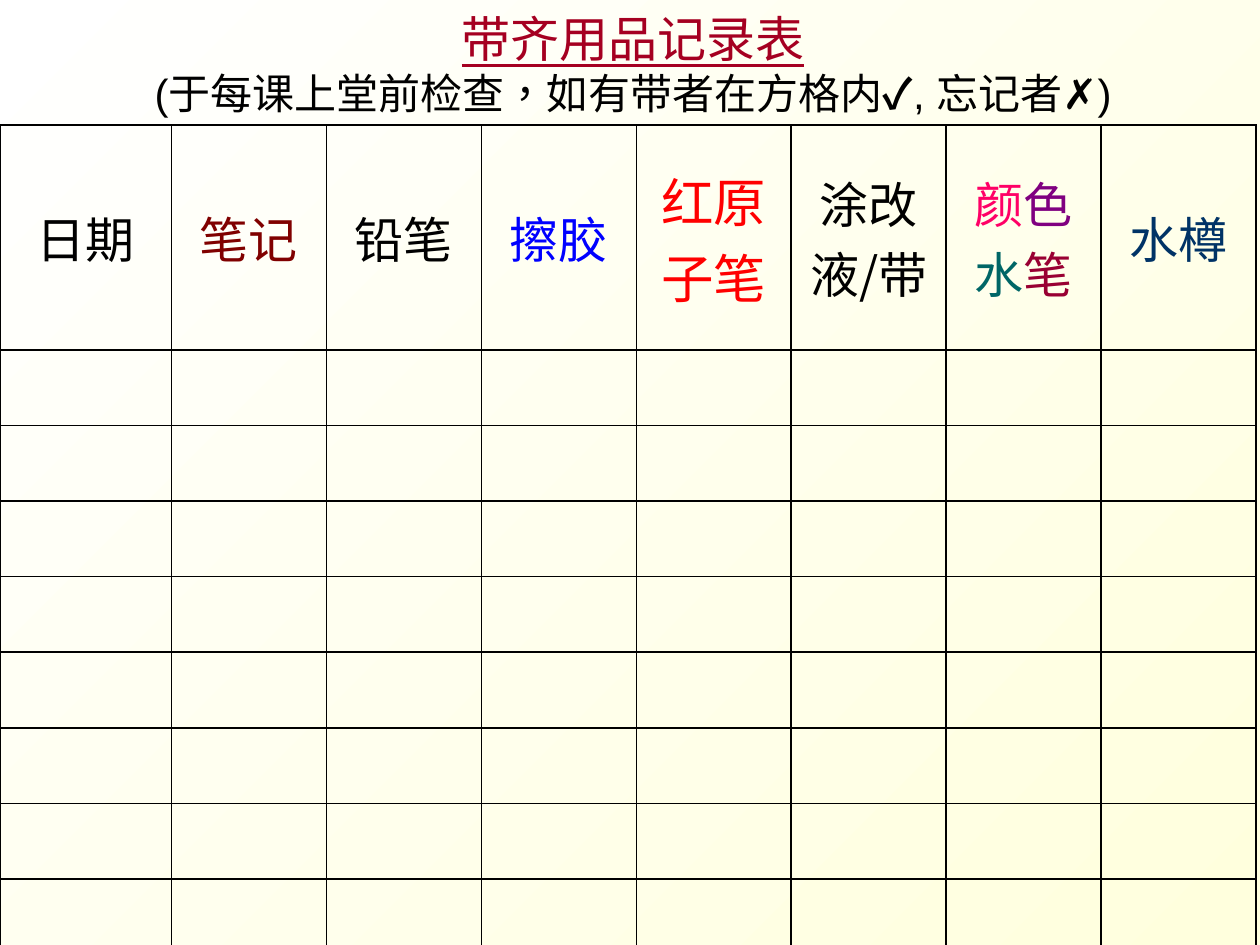
from lxml import etree
from pptx import Presentation
from pptx.dml.color import RGBColor
from pptx.enum import lang, text
from pptx.oxml import ns
from pptx.util import Inches, Pt


def color(value):
    return RGBColor.from_string(value)


def add_text(paragraph, content, size=28, font="Noto Sans CJK SC", fill="000000",
             bold=False, underline=False, east_asian=None, language=None):
    paragraph.alignment = text.PP_ALIGN.CENTER
    for index, line in enumerate(content.split("\n")):
        if index:
            paragraph.add_line_break()
        if not line:
            continue
        run = paragraph.add_run()
        run.text = line
        run.font.size = Pt(size)
        run.font.name = font
        run.font.bold = bold
        run.font.underline = underline
        run.font.color.rgb = color(fill)
        if language:
            run.font.language_id = language
        if east_asian:
            etree.SubElement(run.font._element, ns.qn("a:ea"), typeface=east_asian)


prs = Presentation()
prs.slide_width, prs.slide_height = Inches(10), Inches(7.5)
slide = prs.slides.add_slide(prs.slide_layouts[5])

background = slide.background.fill
background.gradient()
background.gradient_angle = 315
for stop, shade in zip(background.gradient_stops, ["FFFFFF", "FFFFDD"]):
    stop.color.rgb = color(shade)

title = slide.shapes.title
title.left, title.top = Inches(0.4), Inches(0.05)
title.width, title.height = Inches(9.25), Inches(0.91)
title.text_frame.auto_size = text.MSO_AUTO_SIZE.NONE
title.text_frame.vertical_anchor = text.MSO_ANCHOR.MIDDLE
heading = title.text_frame.paragraphs[0]
chinese = lang.MSO_LANGUAGE_ID.TRADITIONAL_CHINESE
add_text(heading, "带齐用品记录表\n", font="Arial", fill="A50021", underline=True,
         language=chinese)
for words, bold in [("(于每课上堂前检查，如有带者在方格内", False), ("✓", True),
                    (", 忘记者", False), ("✗", True), (")", False)]:
    add_text(heading, words, size=24, font="Arial", bold=bold, language=chinese)

headers = [
    (28, [("日期", "000000")]),
    (28, [("笔记", "800000")]),
    (28, [("铅笔", "000000")]),
    (28, [("擦胶", "0000FF")]),
    (30, [("红原\n子笔", "FF0000")]),
    (28, [("涂改\n液/带", "000000")]),
    (28, [("颜", "FF0066"), ("色\n", "800080"), ("水", "006666"), ("笔", "990033")]),
    (28, [("水樽", "003366")]),
]
record = slide.shapes.add_table(10, len(headers), Inches(0), Inches(0.99),
                                Inches(10), Inches(6.51)).table
record.first_row = record.horz_banding = False
for index, column in enumerate(record.columns):
    column.width = Inches(1.23 if index else 1.36)
for index, row in enumerate(record.rows):
    row.height = Inches(0.6 if index else 1.12)

for cell in record.iter_cells():
    cell.vertical_anchor = text.MSO_ANCHOR.MIDDLE
    properties = cell._tc.get_or_add_tcPr()
    for side in ["lnL", "lnR", "lnT", "lnB"]:
        border = etree.SubElement(properties, ns.qn(f"a:{side}"), w=str(Pt(1)))
        solid = etree.SubElement(border, ns.qn("a:solidFill"))
        etree.SubElement(solid, ns.qn("a:srgbClr"), val="000000")
    cell.fill.background()

for index, (size, parts) in enumerate(headers):
    label = record.cell(0, index).text_frame.paragraphs[0]
    for words, fill in parts:
        add_text(label, words, size=size, fill=fill, east_asian="Noto Sans CJK SC")

prs.save("out.pptx")
